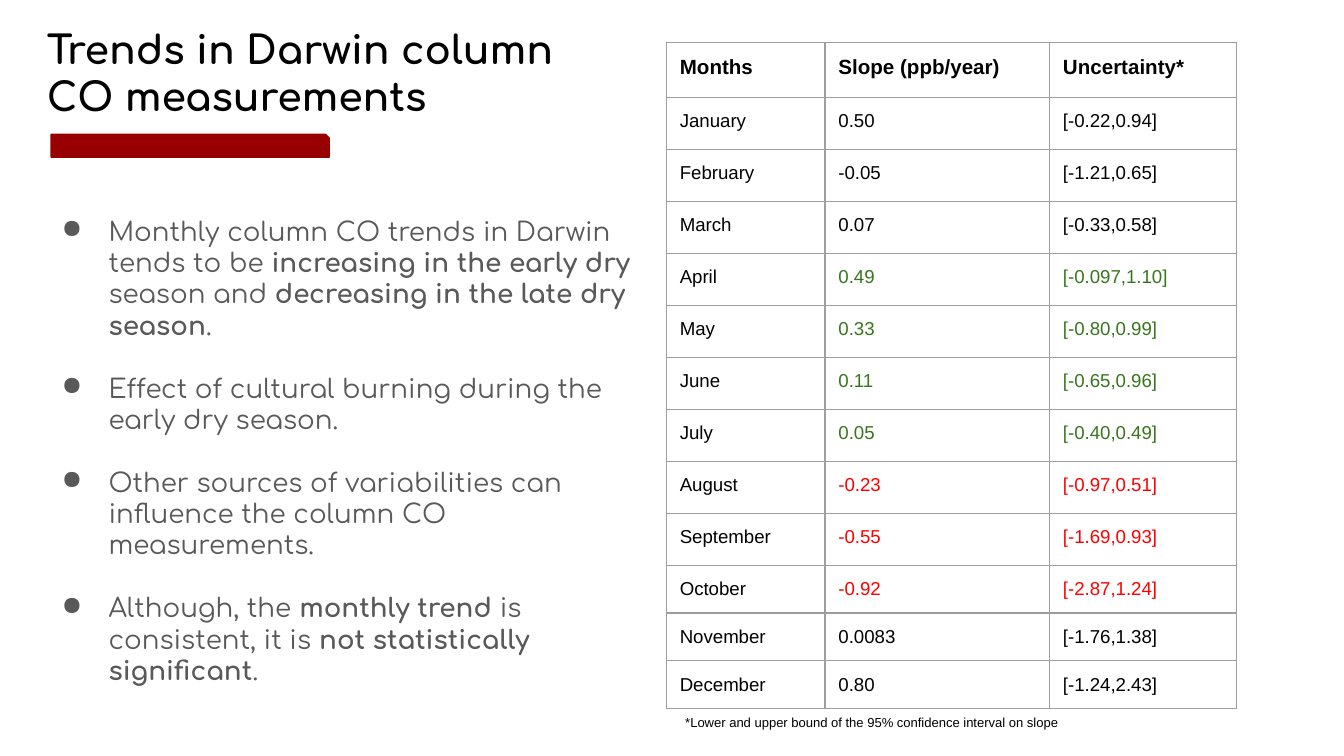
from dataclasses import dataclass

from lxml import etree
from pptx import Presentation
from pptx.dml.color import RGBColor
from pptx.enum.shapes import MSO_SHAPE
from pptx.oxml.ns import qn
from pptx.util import Pt

SNIPPED = MSO_SHAPE.SNIP_1_RECTANGLE


@dataclass(frozen=True)
class Theme:
    """Colours, fonts and type sizes of the slide."""
    black: str = "000000"
    grey: str = "595959"
    green: str = "38761D"
    red: str = "FF0000"
    accent: str = "980000"
    border: str = "9E9E9E"
    display: str = "Comfortaa"
    plain: str = "Arial"
    title: float = 21
    body: float = 14
    header: float = 11
    cell: float = 10
    note: float = 7
    inset: float = 7.2
    line: float = 0.75


class SlideBuilder:
    """Draws styled elements on the current page."""

    def __init__(self, page, theme):
        """Keep the page and its theme."""
        self.page = page
        self.theme = theme

    def style(self, font, name, size, color, bold=None):
        """Set the look of a font."""
        font.name = name
        font.size = Pt(size)
        font.color.rgb = RGBColor.from_string(color)
        font.bold = bold

    def frame(self, left, top, width, height):
        """Add a wrapping text box and return its frame."""
        box = self.page.shapes.add_textbox(Pt(left), Pt(top), Pt(width), Pt(height))
        frame = box.text_frame
        frame.word_wrap = True
        inset = Pt(self.theme.inset)
        frame.margin_left = frame.margin_right = inset
        frame.margin_top = frame.margin_bottom = inset
        return frame

    def text(self, area, words, name, size, bold=None):
        """Add a text box with one black paragraph."""
        para = self.frame(*area).paragraphs[0]
        para.text = words
        self.style(para.font, name, size, self.theme.black, bold)

    def bullets(self, area, items, gap):
        """Add a bulleted list whose items are (words, bold) spans."""
        frame = self.frame(*area)
        for index, spans in enumerate(items):
            para = frame.add_paragraph() if index else frame.paragraphs[0]
            props = para._p.get_or_add_pPr()
            props.set("marL", str(Pt(36)))
            props.set("indent", str(-Pt(25.2)))
            if index:
                para.space_before = Pt(gap)
            color = etree.SubElement(props, qn("a:buClr"))
            etree.SubElement(color, qn("a:srgbClr"), val=self.theme.grey)
            etree.SubElement(props, qn("a:buChar"), char="●")
            self.style(para.font, self.theme.display, self.theme.body, self.theme.grey)
            for words, bold in spans:
                span = para.add_run()
                span.text = words
                span.font.bold = bold

    def bar(self, left, top, width, height):
        """Add the accent bar with a snipped corner."""
        shape = self.page.shapes.add_shape(SNIPPED, Pt(left), Pt(top), Pt(width), Pt(height))
        shape.shadow.inherit = False
        color = RGBColor.from_string(self.theme.accent)
        shape.fill.solid()
        shape.fill.fore_color.rgb = color
        shape.line.color.rgb = color
        shape.line.width = Pt(self.theme.line)

    def cell(self, cell, words, size, color, bold):
        """Fill one bordered table cell."""
        inset = Pt(self.theme.inset)
        cell.margin_left = cell.margin_right = inset
        cell.margin_top = cell.margin_bottom = inset
        para = cell.text_frame.paragraphs[0]
        para.text = words
        self.style(para.font, self.theme.plain, size, color, bold)
        props = cell._tc.get_or_add_tcPr()
        for side in ("lnL", "lnR", "lnT", "lnB"):
            edge = etree.SubElement(props, qn(f"a:{side}"), w=str(Pt(self.theme.line)))
            fill = etree.SubElement(edge, qn("a:solidFill"))
            etree.SubElement(fill, qn("a:srgbClr"), val=self.theme.border)
        cell.fill.background()

    def table(self, left, top, widths, heights, header, rows):
        """Add a table from a header and (color, values) rows."""
        shape = self.page.shapes.add_table(
            len(heights), len(widths), Pt(left), Pt(top), Pt(sum(widths)), Pt(sum(heights)))
        table = shape.table
        table.first_row = table.horz_banding = False
        for column, width in zip(table.columns, widths):
            column.width = Pt(width)
        for row, height in zip(table.rows, heights):
            row.height = Pt(height)
        for column, words in enumerate(header):
            self.cell(table.cell(0, column), words, self.theme.header, self.theme.black, True)
        for index, (color, values) in enumerate(rows, 1):
            for column, words in enumerate(values):
                tint = color if column else self.theme.black
                self.cell(table.cell(index, column), words, self.theme.cell, tint, False)


def main():
    """Build and save the deck."""
    theme = Theme()
    deck = Presentation()
    deck.slide_width, deck.slide_height = Pt(720), Pt(405)
    builder = SlideBuilder(deck.slides.add_slide(deck.slide_layouts[6]), theme)

    rows = [
        (theme.black, ("January", "0.50", "[-0.22,0.94]")),
        (theme.black, ("February", "-0.05", "[-1.21,0.65]")),
        (theme.black, ("March", "0.07", "[-0.33,0.58]")),
        (theme.green, ("April", "0.49", "[-0.097,1.10]")),
        (theme.green, ("May", "0.33", "[-0.80,0.99]")),
        (theme.green, ("June", "0.11", "[-0.65,0.96]")),
        (theme.green, ("July", "0.05", "[-0.40,0.49]")),
        (theme.red, ("August", "-0.23", "[-0.97,0.51]")),
        (theme.red, ("September", "-0.55", "[-1.69,0.93]")),
        (theme.red, ("October", "-0.92", "[-2.87,1.24]")),
        (theme.black, ("November", "0.0083", "[-1.76,1.38]")),
        (theme.black, ("December", "0.80", "[-1.24,2.43]")),
    ]
    heights = [29.5] + [27.85] * 9 + [25.5] * 3
    builder.table(357, 22.8, [85, 120.3, 100.2], heights,
                  ("Months", "Slope (ppb/year)", "Uncertainty*"), rows)
    builder.text((18, 6.5, 326, 65.5), "Trends in Darwin column CO measurements",
                 theme.display, theme.title, True)
    builder.bullets((15.1, 108, 332, 286), [
        [("Monthly column CO trends in Darwin tends to be ", False),
         ("increasing in the early dry", True), (" season and ", False),
         ("decreasing in the late dry season", True), (".", False)],
        [("Effect of cultural burning during the early dry season.", False)],
        [("Other sources of variabilities can influence the column CO measurements.", False)],
        [("Although, the ", False), ("monthly trend", True),
         (" is consistent, it is ", False),
         ("not statistically significant", True), (".", False)],
    ], 16.8)
    builder.text((360, 378.7, 315.4, 23),
                 "*Lower and upper bound of the 95% confidence interval on slope",
                 theme.plain, theme.note)
    builder.bar(27.4, 72, 149, 12.2)
    deck.save("out.pptx")


if __name__ == "__main__":
    main()
